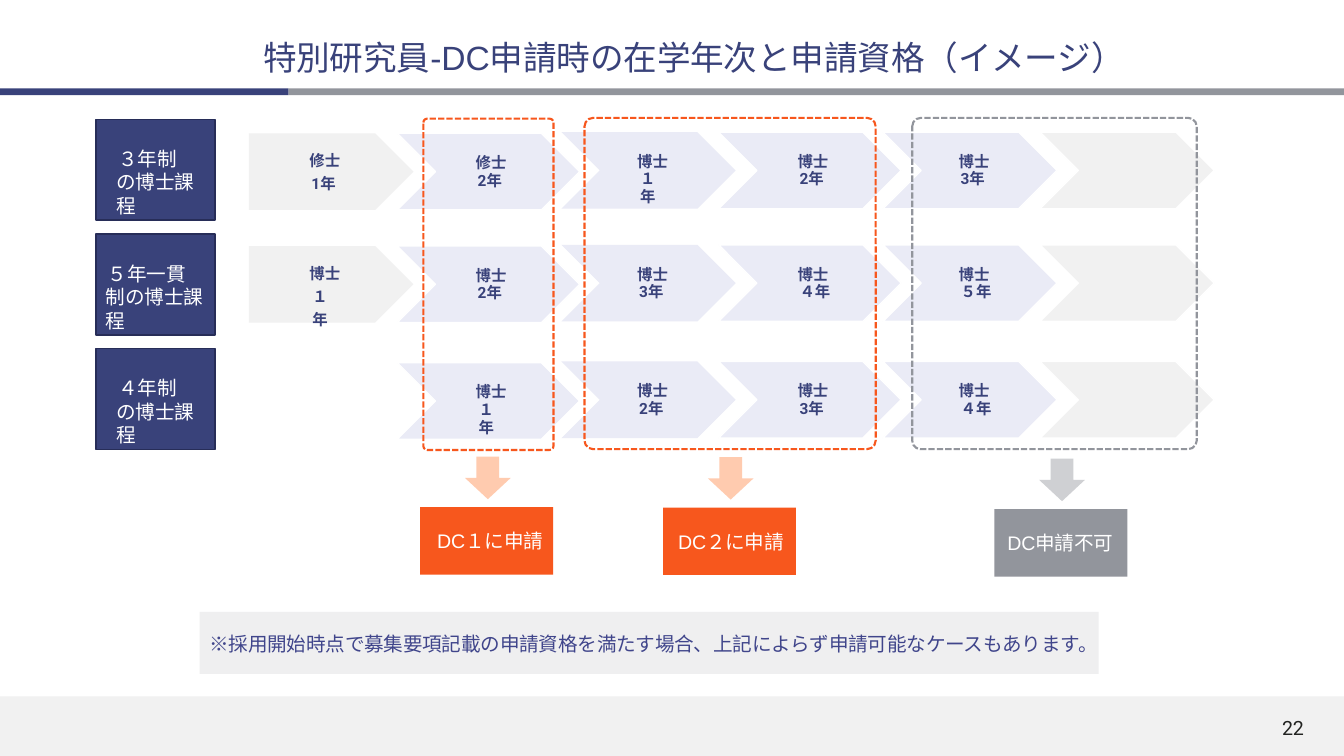
import pptx
import pptx.util
import pptx.dml.color
import pptx.enum.dml
import pptx.enum.shapes
import pptx.enum.text
from lxml import etree

Cm = pptx.util.Cm
Pt = pptx.util.Pt
KIND = pptx.enum.shapes.MSO_SHAPE
NAVY, GREY, ORANGE, WHITE = "39427A", "92959C", "F7571D", "FFFFFF"
LILAC, PALE = "EAEBF6", "F1F1F1"

# column: order of drawing, left, width, label offset, outlined
COLS = [
    (2, 14.15, 4.39, 1.88, False),
    (3, 18.11, 4.6, 1.96, True),
    (4, 22.25, 4.39, 1.88, True),
    (0, 6.27, 4.15, 1.5, False),
    (1, 10.01, 4.6, 1.95, True),
    (5, 26.21, 4.39, 0, True),
]


def tint(text):
    return pptx.dml.color.RGBColor.from_string(text)


def style(item, **vals):
    for key, val in vals.items():
        setattr(item, key, val)


def shape(slide, kind, box, fill=None, line=None, width=1):
    item = slide.shapes.add_shape(kind, *[Cm(v) for v in box])
    item.shadow.inherit = False
    if fill:
        item.fill.solid()
        item.fill.fore_color.rgb = tint(fill)
    else:
        item.fill.background()
    if line:
        item.line.color.rgb = tint(line)
        item.line.width = Pt(width)
    else:
        item.line.fill.background()
    return item


def frame(item, left=0, top=0, right=0):
    body = item.text_frame
    style(body, word_wrap=True, margin_left=Cm(left), margin_top=Cm(top),
          margin_right=Cm(right), margin_bottom=0,
          vertical_anchor=pptx.enum.text.MSO_ANCHOR.TOP)
    return body


def write(par, runs, size, color, bold=False, left=0, first=0, gap=None, space=0):
    style(par, alignment=pptx.enum.text.PP_ALIGN.LEFT)
    if gap:
        par.line_spacing = gap
    prop = par._p.get_or_add_pPr()
    prop.set("marL", str(Cm(left)))
    prop.set("indent", str(Cm(first)))
    for text, face in runs:
        run = par.add_run()
        run.text = text
        style(run.font, name=face, size=Pt(size), bold=bold)
        run.font.color.rgb = tint(color)
        if space:
            run._r.get_or_add_rPr().set("spc", str(space))


def textbox(slide, box, top=0):
    return frame(slide.shapes.add_textbox(*[Cm(v) for v in box]), top=top)


def header(slide, x, y, w):
    split = 7.27
    shape(slide, KIND.RECTANGLE, (x + split, y, w - split, 0.17), GREY)
    shape(slide, KIND.RECTANGLE, (x, y, split, 0.17), NAVY)
    body = textbox(slide, (x + 4.17, y - 1.34, 25.53, 1.09), 0.03)
    runs = [("特別研究員", "Roboto"), ("-DC", "Arial"),
            ("申請時の在学年次と申請資格（イメージ）", "Roboto")]
    write(body.paragraphs[0], runs, 24, NAVY, left=2.46, space=-10)


def footer(slide, x, y, w, h):
    shape(slide, KIND.RECTANGLE, (x, y, w, h), PALE)
    body = textbox(slide, (x + 32.21, y + 0.51, 1.02, 0.58))
    write(body.paragraphs[0], [("22", "Roboto")], 14, "222321",
          left=0.1, gap=Pt(16.1), space=-20)


def label(slide, x, y, lines, gap):
    body = textbox(slide, (x, y, 0.86, 0.97), 0.03)
    for i, text in enumerate(lines):
        par = body.paragraphs[0] if i == 0 else body.add_paragraph()
        left = 0.03 if i == 0 else 0.1 if text == "１年" else 0.08
        write(par, [(text, "Roboto")], 11, NAVY, True, left, gap=gap)


def course(slide, x, y, name, pads, drop, years):
    block = shape(slide, KIND.RECTANGLE, (x, y, 3, 2.54), NAVY, "272D58")
    body = frame(block, pads[0], 0.69, pads[1])
    write(body.paragraphs[0], [(name, "Roboto")], 14, WHITE, first=0.05, space=-10)
    for col, left, width, shift, lined in COLS:
        year = years[col]
        if year is None:
            continue
        top = y + drop + (0.03 if col < 2 else 0)
        kind = KIND.PENTAGON if col == 0 else KIND.CHEVRON
        fill = PALE if col in (0, 5) else LILAC
        shape(slide, kind, (left, top, width, 1.93), fill, WHITE if lined else None)
        if year:
            gap, fall = (1.25, 0.3) if col == 0 else (Pt(12.6), 0.49)
            label(slide, left + shift, top + fall, year.split(), gap)


def zone(slide, x, y, w, h, color):
    item = shape(slide, KIND.ROUNDED_RECTANGLE, (x, y, w, h), None, color, 1.5)
    item.adjustments[0] = 0.03
    item.line.dash_style = pptx.enum.dml.MSO_LINE.SQUARE_DOT


def result(slide, x, y, word, pad, color, glow):
    arrow = shape(slide, KIND.DOWN_ARROW, (x + 1.13, y, 1.15, 1.07), glow)
    paint = arrow._element.spPr.find(".//" + pptx.oxml.ns.qn("a:srgbClr"))
    etree.SubElement(paint, pptx.oxml.ns.qn("a:alpha"), val="44000")
    block = shape(slide, KIND.RECTANGLE, (x, y + 1.27, 3.35, 1.7), color)
    body = frame(block, top=0.56)
    write(body.paragraphs[0], [("DC", "Arial"), (word, "Roboto")], 14, WHITE,
          left=pad, space=-20)


def note(slide, x, y, w, h):
    block = shape(slide, KIND.RECTANGLE, (x, y, w, h), "EFEFF0")
    text = "※採用開始時点で募集要項記載の申請資格を満たす場合、上記によらず申請可能なケースもあります。"
    write(frame(block, top=0.51).paragraphs[0], [(text, "Roboto")], 14, "40458B",
          left=0.25, space=-20)


def main():
    deck = pptx.Presentation()
    style(deck, slide_width=Cm(33.87), slide_height=Cm(19.05))
    slide = deck.slides.add_slide(deck.slide_layouts[6])
    footer(slide, 0, 17.55, 33.87, 1.5)
    header(slide, 0, 2.23, 33.87)
    plans = [
        ("３年制の博士課程", (0.51, 0.5), 0.32,
         ["修士 1年", "修士 2年", "博士 １年", "博士 2年", "博士 3年", ""]),
        ("５年一貫制の博士課程", (0.25, 0.26), 0.27,
         ["博士 １年", "博士 2年", "博士 3年", "博士 ４年", "博士 ５年", ""]),
        ("４年制の博士課程", (0.51, 0.5), 0.32,
         [None, "博士 １年", "博士 2年", "博士 3年", "博士 ４年", ""]),
    ]
    for i, plan in enumerate(plans):
        course(slide, 2.42, 3.01 + 2.89 * i, *plan)
    zone(slide, 10.67, 2.99, 3.28, 8.35, ORANGE)
    zone(slide, 14.73, 2.97, 7.34, 8.35, ORANGE)
    zone(slide, 22.99, 2.97, 7.17, 8.35, GREY)
    result(slide, 10.59, 11.51, "１に申請", 0.43, ORANGE, "FF894B")
    result(slide, 16.71, 11.52, "２に申請", 0.38, ORANGE, "FF894B")
    result(slide, 25.06, 11.56, "申請不可", 0.33, GREY, GREY)
    note(slide, 5.03, 15.42, 22.66, 1.56)
    deck.save("out.pptx")


if __name__ == "__main__":
    main()
